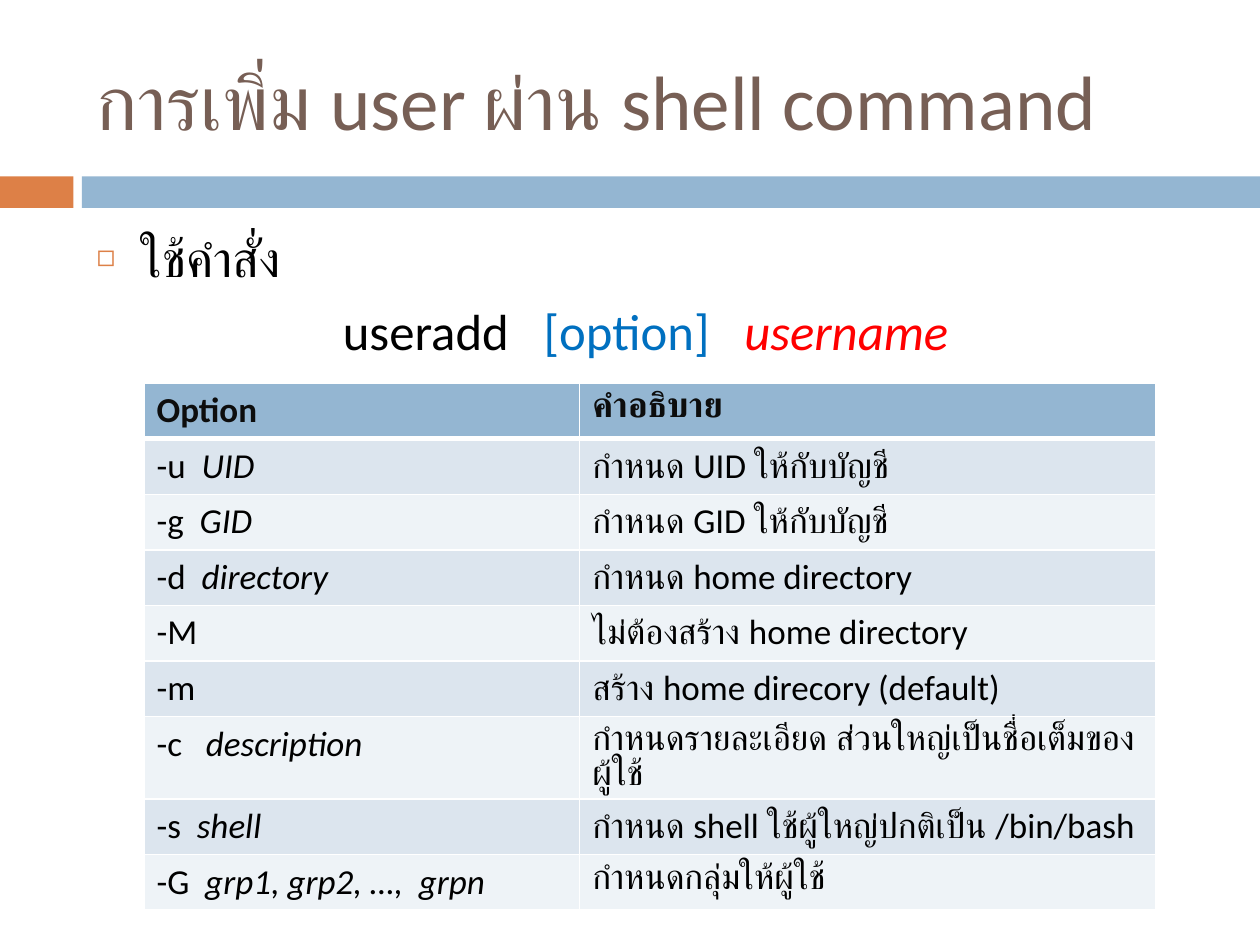
from dataclasses import dataclass
from lxml import etree
from pptx import Presentation
from pptx.dml.color import RGBColor
from pptx.enum import shapes, text
from pptx.oxml.ns import qn
from pptx.util import Pt


@dataclass(frozen=True)
class Theme:
    font: str = "Calibri"
    brown: str = "775F55"
    orange: str = "DD8047"
    blue: str = "94B6D2"
    bands: tuple = ("DCE5EE", "EEF3F7")
    white: str = "FFFFFF"
    black: str = "000000"
    dark: str = "0D0D0D"
    azure: str = "0070C0"
    red: str = "FF0000"
    title: int = 44
    body: int = 29
    cell: int = 20


class Deck:
    def __init__(self, theme):
        self.theme = theme
        self.file = Presentation()
        self.file.slide_width, self.file.slide_height = Pt(720), Pt(540)
        self.slide = self.file.slides.add_slide(self.file.slide_layouts[1])

    def run(self, para, words, size, color, bold=False, slant=False):
        run = para.add_run()
        run.text = words
        font = run.font
        font.name, font.size = self.theme.font, Pt(size)
        font.bold, font.italic = bold, slant
        font.color.rgb = RGBColor.from_string(color)

    def bar(self, left, width, color):
        bar = self.slide.shapes.add_shape(
            shapes.MSO_SHAPE.RECTANGLE, Pt(left), Pt(100.8), Pt(width), Pt(18))
        bar.shadow.inherit = False
        bar.fill.solid()
        bar.fill.fore_color.rgb = RGBColor.from_string(color)
        bar.line.fill.background()

    def holder(self, index, top, height, anchor):
        holder = self.slide.placeholders[index]
        holder.left, holder.top = Pt(48), Pt(top)
        holder.width, holder.height = Pt(642), Pt(height)
        frame = holder.text_frame
        frame.word_wrap = True
        frame.auto_size = text.MSO_AUTO_SIZE.NONE
        frame.vertical_anchor = anchor
        return frame

    def title(self, words):
        frame = self.holder(0, 18, 78, text.MSO_ANCHOR.MIDDLE)
        para = frame.paragraphs[0]
        para.alignment = text.PP_ALIGN.LEFT
        self.run(para, words, self.theme.title, self.theme.brown)

    def body(self, items):
        frame = self.holder(1, 126, 354, text.MSO_ANCHOR.TOP)
        for index, (mark, align, runs) in enumerate(items):
            para = frame.add_paragraph() if index else frame.paragraphs[0]
            para.alignment = align
            para.space_before = Pt(7)
            self.bullet(para, mark)
            for words, color, slant in runs:
                self.run(para, words, self.theme.body, color, slant=slant)

    def bullet(self, para, mark):
        props = para._p.get_or_add_pPr()
        props.set("marL", str(Pt(25.2)))
        props.set("indent", str(Pt(-25.2)))
        if not mark:
            etree.SubElement(props, qn("a:buNone"))
            return
        tint = etree.SubElement(props, qn("a:buClr"))
        etree.SubElement(tint, qn("a:srgbClr"), val=self.theme.orange)
        etree.SubElement(props, qn("a:buSzPct"), val="60000")
        etree.SubElement(props, qn("a:buChar"), char=mark)

    def edges(self, cell, base):
        props = cell._tc.get_or_add_tcPr()
        widths = {"a:lnL": 1, "a:lnR": 1, "a:lnT": 1, "a:lnB": base}
        for spot, (tag, width) in enumerate(widths.items()):
            line = etree.Element(qn(tag), w=str(Pt(width)))
            fill = etree.SubElement(line, qn("a:solidFill"))
            etree.SubElement(fill, qn("a:srgbClr"), val=self.theme.white)
            props.insert(spot, line)

    def table(self, rows):
        theme = self.theme
        grid = self.slide.shapes.add_table(
            len(rows), 2, Pt(82.3), Pt(219), Pt(578), Pt(29.5 * len(rows))).table
        for column, width in zip(grid.columns, (249, 329)):
            column.width = Pt(width)
        for index, row in enumerate(rows):
            head = index == 0
            fill = theme.blue if head else theme.bands[(index - 1) % 2]
            color = theme.dark if head else theme.black
            grid.rows[index].height = Pt(29.5)
            flag, value, note = row
            for spot, runs in enumerate((((flag, False), (value, True)),
                                         ((note, False),))):
                cell = grid.cell(index, spot)
                cell.fill.solid()
                cell.fill.fore_color.rgb = RGBColor.from_string(fill)
                self.edges(cell, 3 if index < 1 else 1)
                para = cell.text_frame.paragraphs[0]
                for words, slant in runs:
                    if words:
                        self.run(para, words, theme.cell, color, head, slant)

    def save(self):
        self.file.save("out.pptx")


def main():
    theme = Theme()
    deck = Deck(theme)
    deck.bar(0, 42, theme.orange)
    deck.bar(46.8, 673.2, theme.blue)
    deck.title("การเพิ่ม user ผ่าน shell command")
    deck.body([
        ("◻", text.PP_ALIGN.LEFT, [("ใช้คำสั่ง", theme.black, False)]),
        (None, text.PP_ALIGN.CENTER, [
            ("useradd   ", theme.black, False),
            ("[option]   ", theme.azure, False),
            ("username", theme.red, True)]),
    ])
    deck.table([
        ("Option", "", "คำอธิบาย"),
        ("-u  ", "UID", "กำหนด UID ให้กับบัญชี"),
        ("-g  ", "GID", "กำหนด GID ให้กับบัญชี"),
        ("-d  ", "directory", "กำหนด home directory"),
        ("-M", "", "ไม่ต้องสร้าง home directory"),
        ("-m", "", "สร้าง home direcory (default)"),
        ("-c  ", " description", "กำหนดรายละเอียด ส่วนใหญ่เป็นชื่อเต็มของผู้ใช้"),
        ("-s", "  shell", "กำหนด shell ใช้ผู้ใหญ่ปกติเป็น /bin/bash"),
        ("-G", "  grp1, grp2, …,  grpn", "กำหนดกลุ่มให้ผู้ใช้"),
    ])
    deck.save()


if __name__ == "__main__":
    main()
